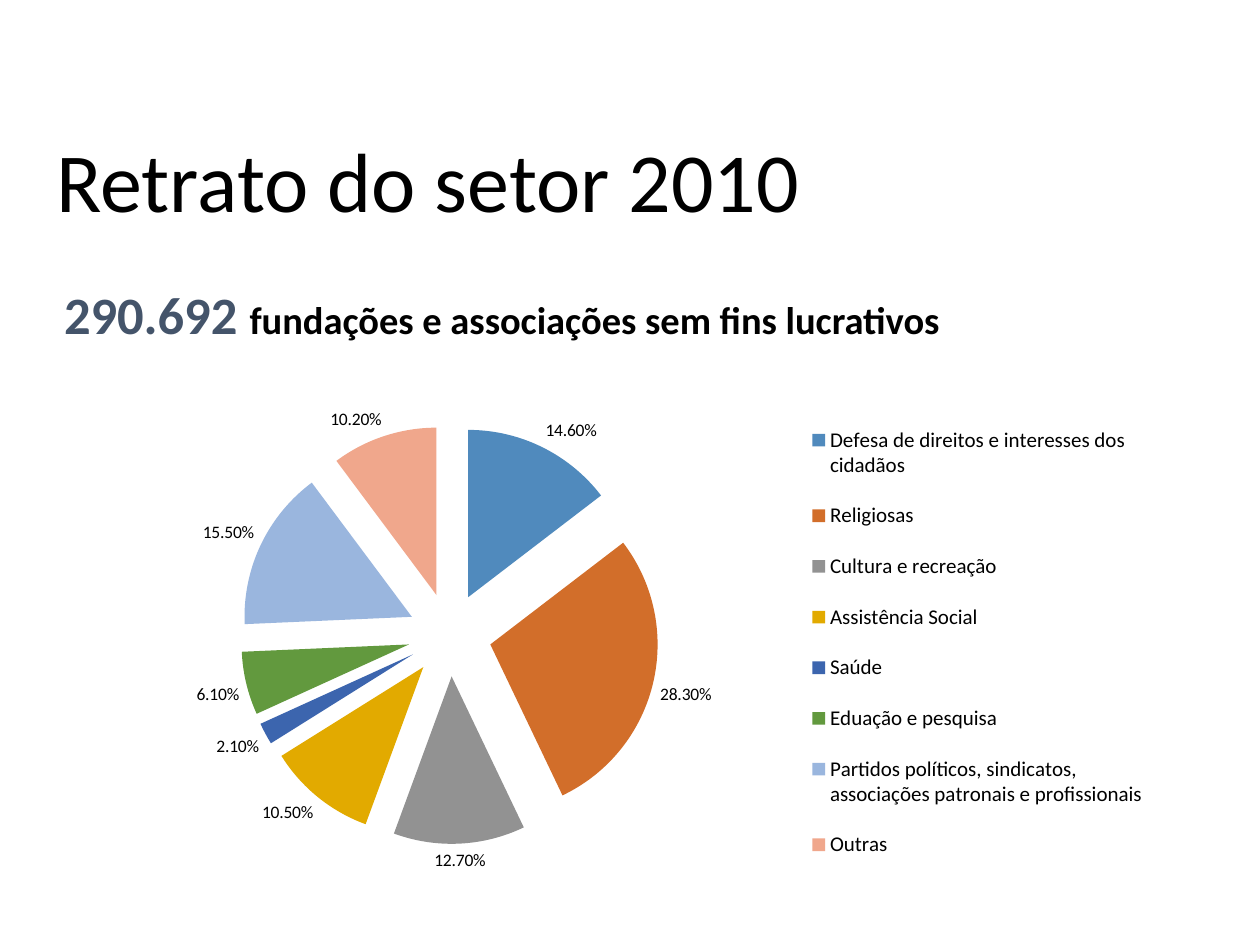
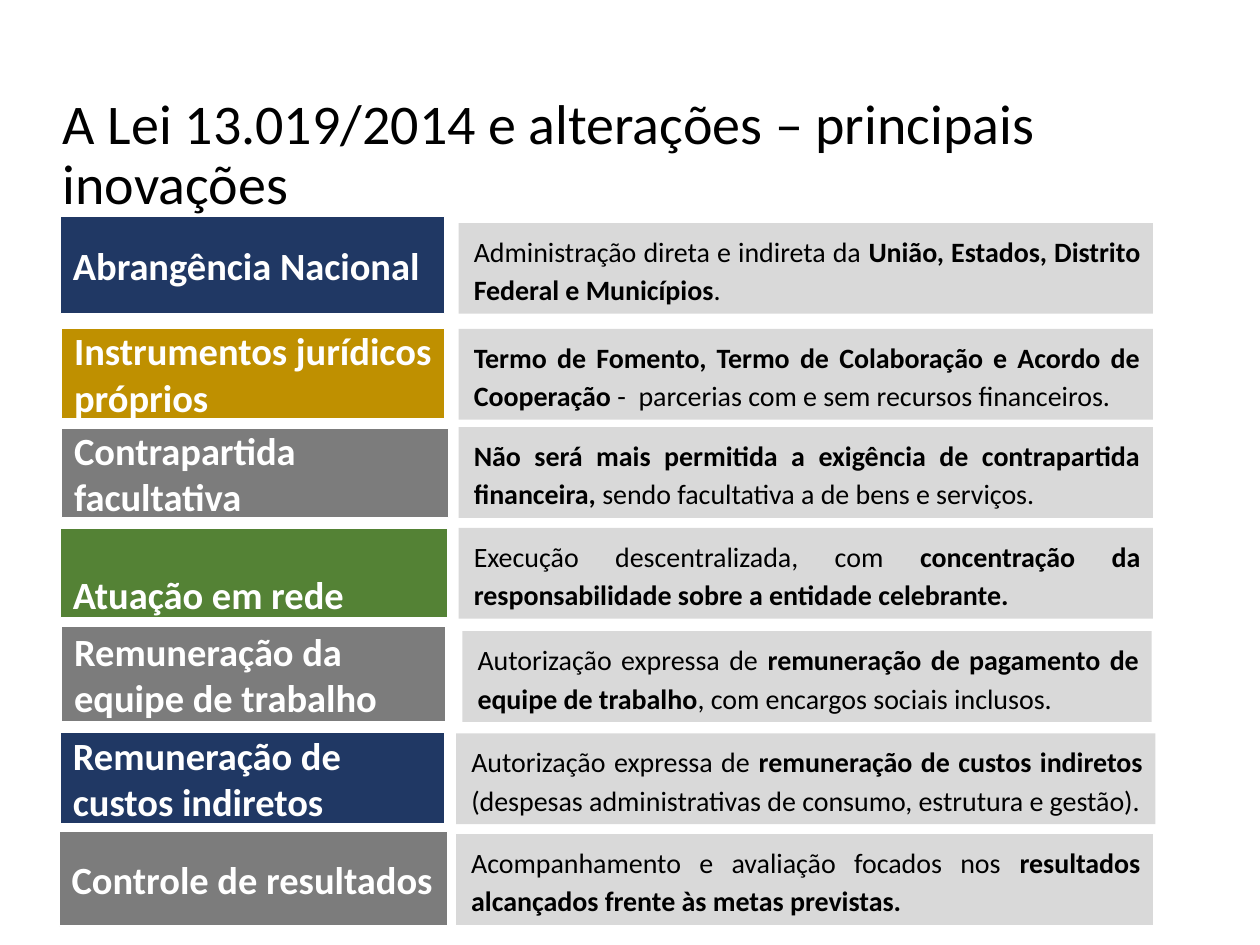
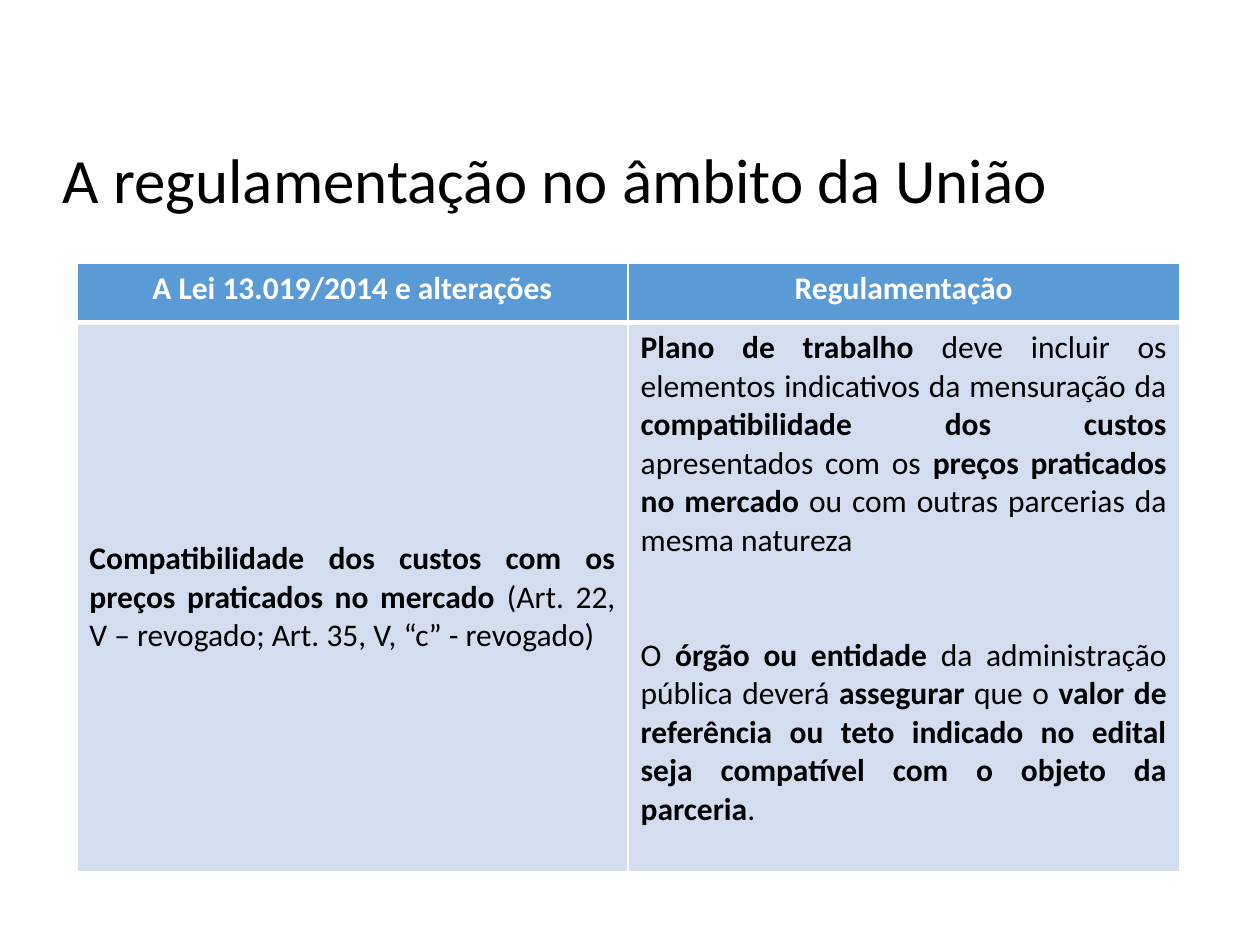
from pptx import Presentation
from pptx.chart.data import CategoryChartData
from pptx.dml.color import RGBColor
from pptx.enum.chart import XL_CHART_TYPE, XL_LABEL_POSITION, XL_LEGEND_POSITION
from pptx.enum.shapes import MSO_SHAPE
from pptx.enum.text import MSO_ANCHOR, PP_ALIGN
from pptx.oxml import parse_xml
from pptx.oxml.ns import nsdecls
from pptx.util import Pt

PIE = XL_CHART_TYPE.PIE_EXPLODED
OUTSIDE_END = XL_LABEL_POSITION.OUTSIDE_END
LEGEND_RIGHT = XL_LEGEND_POSITION.RIGHT
RECTANGLE = MSO_SHAPE.RECTANGLE
TOP, MIDDLE, BOTTOM = MSO_ANCHOR.TOP, MSO_ANCHOR.MIDDLE, MSO_ANCHOR.BOTTOM
LEFT, CENTER, JUSTIFY = PP_ALIGN.LEFT, PP_ALIGN.CENTER, PP_ALIGN.JUSTIFY

PX = 9144  # 100 px to the inch
FONT = "Calibri"
COLORS = {
    "black": "000000",
    "white": "FFFFFF",
    "slate": "44546A",
    "navy": "203864",
    "gold": "BF9000",
    "gray": "7C7C7C",
    "green": "548235",
    "light gray": "D9D9D9",
    "header": "5B9BD5",
    "cell": "D2DEEF",
}


def rgb(name):
    return RGBColor.from_string(COLORS[name])


def add_runs(para, runs, size, color="black"):
    """Add (text, bold) pairs to a paragraph as runs of one size and colour."""
    for text, bold in runs:
        span = para.add_run()
        span.text = text
        span.font.name = FONT
        span.font.size = Pt(size)
        span.font.bold = bold
        span.font.color.rgb = rgb(color)


deck = Presentation()
deck.slide_width, deck.slide_height = 1000 * PX, 750 * PX

# Pages and their titles: text, size, left, top, width
TITLES = [
    ("Retrato do setor 2010", 48, 35, 95, 830),
    ("A Lei 13.019/2014 e alterações – principais inovações", 32, 40, 84, 874),
    ("A regulamentação no âmbito da União", 36, 40, 84, 830),
]
pages = []
for text, size, left, top, width in TITLES:
    page = deck.slides.add_slide(deck.slide_layouts[6])
    frame = page.shapes.add_textbox(left * PX, top * PX, width * PX, 93 * PX).text_frame
    frame.word_wrap = True
    frame.vertical_anchor = BOTTOM
    para = frame.paragraphs[0]
    para.line_spacing = 0.9
    add_runs(para, [(text, False)], size)
    pages.append(page)
portrait_page, law_page, rules_page = pages

# Sector portrait: headline figure and pie
frame = portrait_page.shapes.add_textbox(41 * PX, 219 * PX, 841 * PX, 75 * PX).text_frame
frame.word_wrap = True
para = frame.paragraphs[0]
add_runs(para, [("290.692 ", True)], 30, "slate")
add_runs(para, [("fundações e associações sem fins lucrativos", True)], 22)

SECTORS = [
    ("Defesa de direitos e interesses dos cidadãos", 0.146, "508ABD"),
    ("Religiosas", 0.283, "D26E2A"),
    ("Cultura e recreação", 0.127, "929292"),
    ("Assistência Social", 0.105, "E2AA00"),
    ("Saúde", 0.021, "3C65AE"),
    ("Eduação e pesquisa", 0.061, "62993E"),
    ("Partidos políticos, sindicatos, associações patronais e profissionais", 0.155, "9AB6DE"),
    ("Outras", 0.102, "F0A78C"),
]
data = CategoryChartData(number_format="0.00%")
data.categories = [name for name, share, color in SECTORS]
data.add_series("Series 1", [share for name, share, color in SECTORS])
chart = portrait_page.shapes.add_chart(
    PIE, 77 * PX, 307 * PX, 847 * PX, 398 * PX, data).chart
chart.has_title = False
chart.font.name = FONT
chart.font.size = Pt(10)
chart.font.color.rgb = rgb("black")
chart.has_legend = True
chart.legend.position = LEGEND_RIGHT
chart.legend.include_in_layout = False
chart.legend.font.size = Pt(12)
# Legend place as shares of the chart, tall enough to spread its entries
legend_layout = "".join(
    f'<c:{tag} val="{value}"/>' for tag, value in (
        ("xMode", "edge"), ("yMode", "edge"),
        ("x", 0.66), ("y", 0.03), ("w", 0.33), ("h", 0.96)))
for old in chart.legend._element.findall("{*}layout"):
    chart.legend._element.remove(old)
chart.legend._element.find("{*}legendPos").addnext(parse_xml(
    f'<c:layout {nsdecls("c")}><c:manualLayout>{legend_layout}</c:manualLayout></c:layout>'))
plot = chart.plots[0]
plot.vary_by_categories = True
plot.has_data_labels = True
labels = plot.data_labels
labels.show_value = True
labels.show_percentage = False
labels.number_format = "0.00%"
labels.number_format_is_linked = False
labels.position = OUTSIDE_END
series = plot.series[0]
for index, (name, share, color) in enumerate(SECTORS):
    fill = series.points[index].format.fill
    fill.solid()
    fill.fore_color.rgb = RGBColor.from_string(color)
for old in series._element.findall("{*}explosion"):
    series._element.remove(old)
first_point = series._element.find("{*}dPt")
first_point.addprevious(parse_xml(f'<c:explosion {nsdecls("c")} val="25"/>'))
for point in series._element.findall("{*}dPt"):
    point.find("{*}spPr").addprevious(parse_xml(f'<c:explosion {nsdecls("c")} val="25"/>'))

# Innovations: label, colour, label box, detail left, top and width, detail runs
INNOVATIONS = [
    ("Abrangência Nacional", "navy", (48, 172, 305, 77), (364, 177, 551),
     [("Administração direta e indireta da ", False),
      ("União, Estados, Distrito Federal e Municípios", True), (".", False)]),
    ("Instrumentos jurídicos próprios", "gold", (49, 261, 304, 71), (364, 261, 551),
     [("Termo de Fomento, Termo de Colaboração e Acordo de Cooperação ", True),
      ("-  parcerias com e sem recursos financeiros.", False)]),
    ("Contrapartida facultativa", "gray", (49, 340, 307, 71), (364, 339, 551),
     [("Não será mais permitida a exigência de contrapartida financeira, ", True),
      ("sendo facultativa a de bens e serviços.", False)]),
    ("Atuação em rede", "green", (48, 419, 307, 71), (364, 419, 551),
     [("Execução descentralizada, com ", False),
      ("concentração da responsabilidade sobre a entidade celebrante.", True)]),
    ("Remuneração da equipe de trabalho", "gray", (49, 497, 305, 76), (367, 501, 547),
     [("Autorização expressa de", False),
      (" remuneração de pagamento de equipe de trabalho", True),
      (", com encargos sociais inclusos.", False)]),
    ("Remuneração de custos indiretos", "navy", (48, 581, 305, 73), (362, 582, 555),
     [("Autorização expressa de", False),
      (" remuneração de custos indiretos ", True),
      ("(despesas administrativas de consumo, estrutura e gestão).", False)]),
    ("Controle de resultados", "gray", (47, 660, 308, 75), (362, 662, 553),
     [("Acompanhamento e avaliação focados nos ", False),
      ("resultados alcançados frente às metas previstas.", True)]),
]
for label, color, label_place, detail_place, detail in INNOVATIONS:
    label_box = law_page.shapes.add_shape(RECTANGLE, *[n * PX for n in label_place])
    detail_box = law_page.shapes.add_shape(
        RECTANGLE, *[n * PX for n in (*detail_place, 72)])
    for box, fill_name in ((label_box, color), (detail_box, "light gray")):
        box.shadow.inherit = False
        box.fill.solid()
        box.fill.fore_color.rgb = rgb(fill_name)
        box.text_frame.word_wrap = True
    label_box.line.color.rgb = rgb("white")
    label_box.line.width = Pt(0.75)
    detail_box.line.fill.background()

    frame = label_box.text_frame
    frame.vertical_anchor = MIDDLE
    if label == "Atuação em rede":
        frame.vertical_anchor = BOTTOM
        frame.margin_bottom = 0
    para = frame.paragraphs[0]
    para.alignment = LEFT
    add_runs(para, [(label, True)], 22, "white")

    frame = detail_box.text_frame
    frame.vertical_anchor = TOP
    frame.margin_left = 12 * PX
    para = frame.paragraphs[0]
    para.alignment = JUSTIFY
    para.line_spacing = 1.15
    add_runs(para, detail, 16)

# Regulation table: each cell is a list of paragraphs, each a list of runs
ROWS = [
    [[[("A Lei 13.019/2014 e alterações", True)]], [[("Regulamentação", True)]]],
    [
        [[("Compatibilidade dos custos com os preços praticados no mercado ", True),
          ("(Art. 22, V – revogado; Art. 35, V, “c” - revogado)", False)]],
        [[("Plano de trabalho", True),
          (" deve incluir os elementos indicativos da mensuração da ", False),
          ("compatibilidade dos custos ", True),
          ("apresentados com os ", False),
          ("preços praticados no mercado", True),
          (" ou com outras parcerias da mesma natureza", False)],
         [("O ", False), ("órgão ou entidade", True),
          (" da administração pública deverá ", False),
          ("assegurar", True), (" que o ", False),
          ("valor de referência ou teto indicado no edital seja compatível "
           "com o objeto da parceria", True),
          (".", False)]],
    ],
]
# Fill, text colour, alignment, height, anchors and rules (edge, points) of each row
ROW_STYLES = [
    ("header", "white", CENTER, 47, (TOP, TOP),
     (("lnL", 1), ("lnR", 1), ("lnT", 1), ("lnB", 3))),
    ("cell", "black", JUSTIFY, 436, (MIDDLE, TOP),
     (("lnL", 1), ("lnR", 1), ("lnT", 3), ("lnB", 1))),
]
table = rules_page.shapes.add_table(2, 2, 61 * PX, 209 * PX, 875 * PX, 483 * PX).table
for row, cells, style in zip(table.rows, ROWS, ROW_STYLES):
    fill_name, text_color, alignment, height, anchors, rules = style
    row.height = height * PX
    for cell, paragraphs, anchor in zip(row.cells, cells, anchors):
        cell.fill.solid()
        cell.fill.fore_color.rgb = rgb(fill_name)
        cell.vertical_anchor = anchor
        for position, (edge, points) in enumerate(rules):
            cell._tc.get_or_add_tcPr().insert(position, parse_xml(
                f'<a:{edge} {nsdecls("a")} w="{Pt(points)}"><a:solidFill>'
                f'<a:srgbClr val="{COLORS["white"]}"/></a:solidFill></a:{edge}>'))
        for index, runs in enumerate(paragraphs):
            if index == 0:
                para = cell.text_frame.paragraphs[0]
            else:
                para = cell.text_frame.add_paragraph()
                para.space_before = Pt(44)
            para.alignment = alignment
            add_runs(para, runs, 18, text_color)

deck.save("out.pptx")
